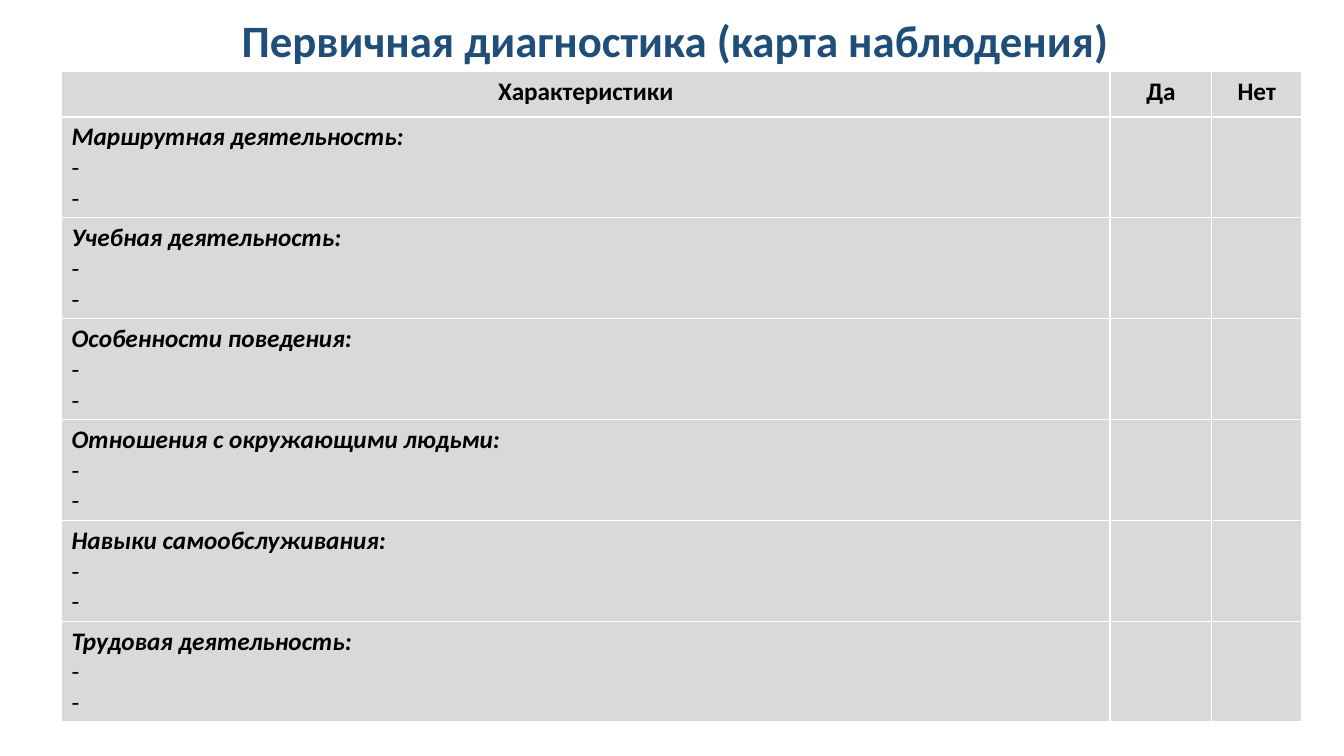
from pptx import Presentation
from pptx.dml.color import RGBColor
from pptx.enum.text import MSO_ANCHOR, PP_ALIGN
from pptx.util import Inches, Pt

TITLE = "Первичная диагностика (карта наблюдения)"
HEADERS = ["Характеристики", "Да", "Нет"]
SECTIONS = [
    "Маршрутная деятельность:",
    "Учебная деятельность:",
    "Особенности поведения:",
    "Отношения с окружающими людьми:",
    "Навыки самообслуживания:",
    "Трудовая деятельность:",
]
BULLETS = ["-", "-"]

COL_WIDTHS = [10.4, 1.01, 0.89]
HEADER_HEIGHT = 0.45
SECTION_HEIGHT = 0.95

FONT = "Calibri"
NAVY = RGBColor(0x1F, 0x4E, 0x79)
BLACK = RGBColor(0, 0, 0)
GRAY = RGBColor(0xD9, 0xD9, 0xD9)
CENTER, LEFT = PP_ALIGN.CENTER, PP_ALIGN.LEFT
MIDDLE = MSO_ANCHOR.MIDDLE


def write(p, text, size=18, color=BLACK, bold=False, italic=False, align=LEFT):
    p.alignment = align
    r = p.add_run()
    r.text = text
    r.font.name = FONT
    r.font.size = Pt(size)
    r.font.bold = bold
    r.font.italic = italic
    r.font.color.rgb = color


prs = Presentation()
prs.slide_width, prs.slide_height = Inches(13.33), Inches(7.5)
s = prs.slides.add_slide(prs.slide_layouts[6])

tf = s.shapes.add_textbox(Inches(0.95), Inches(0.14), Inches(11.5), Inches(0.58)).text_frame
tf.word_wrap = True
tf.vertical_anchor = MIDDLE
write(tf.paragraphs[0], TITLE, size=32, color=NAVY, bold=True, align=CENTER)
tf.paragraphs[0].line_spacing = 0.9

heights = [HEADER_HEIGHT] + [SECTION_HEIGHT] * len(SECTIONS)
table = s.shapes.add_table(len(heights), len(COL_WIDTHS), Inches(0.61), Inches(0.71),
                           Inches(sum(COL_WIDTHS)), Inches(sum(heights))).table
for column, width in zip(table.columns, COL_WIDTHS):
    column.width = Inches(width)
for row, height in zip(table.rows, heights):
    row.height = Inches(height)
for cell in table.iter_cells():
    cell.fill.solid()
    cell.fill.fore_color.rgb = GRAY

for col, header in enumerate(HEADERS):
    write(table.cell(0, col).text_frame.paragraphs[0], header, bold=True, align=CENTER)
for row, section in enumerate(SECTIONS, 1):
    tf = table.cell(row, 0).text_frame
    write(tf.paragraphs[0], section, bold=True, italic=True)
    for bullet in BULLETS:
        write(tf.add_paragraph(), bullet)

prs.save("out.pptx")
